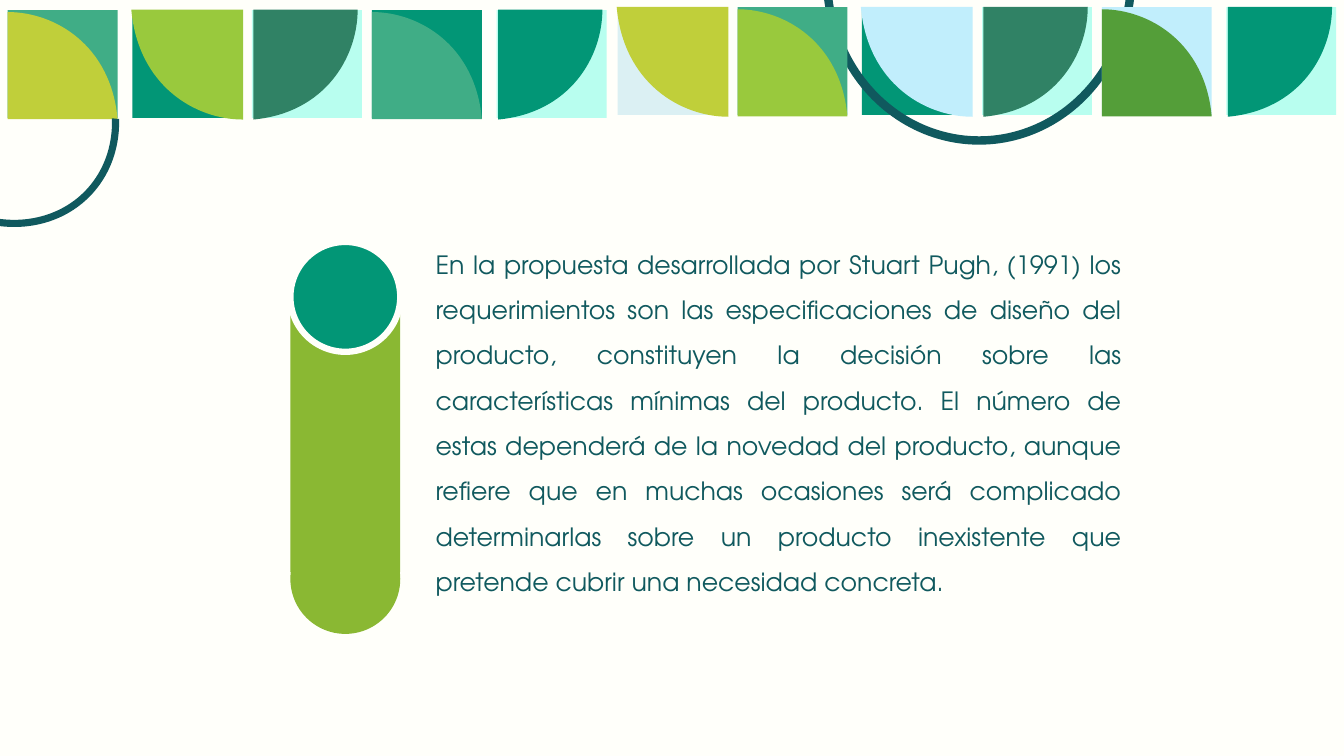
from lxml import etree
from pptx import Presentation
from pptx.dml.color import RGBColor
from pptx.enum.shapes import MSO_SHAPE
from pptx.enum.text import MSO_ANCHOR, PP_ALIGN
from pptx.oxml.ns import qn
from pptx.util import Pt

IVORY = RGBColor(0xFF, 0xFF, 0xFA)
PETROL = RGBColor(0x10, 0x59, 0x5E)
TEAL = RGBColor(0x02, 0x96, 0x76)
MINT = RGBColor(0xB8, 0xFE, 0xEF)
SKY = RGBColor(0xC1, 0xEE, 0xFC)
MIST = RGBColor(0xDB, 0xF0, 0xF3)
JADE = RGBColor(0x40, 0xAD, 0x86)
PINE = RGBColor(0x30, 0x82, 0x65)
LEAF = RGBColor(0x54, 0x9E, 0x39)
LIME = RGBColor(0x99, 0xC9, 0x3D)
OLIVE = RGBColor(0xC0, 0xCF, 0x3A)
GRASS = RGBColor(0x8A, 0xB8, 0x33)

TILE_W, TILE_H = 78.5, 77

# Left, top, square colour, petal colour, corner of the petal
TILES = [
    (5.5, 7.2, JADE, OLIVE, "SW"),
    (94.5, 7.2, TEAL, LIME, "NE"),
    (180, 7.2, MINT, PINE, "NW"),
    (265.7, 7.2, TEAL, JADE, "SW"),
    (354.8, 7.2, MINT, TEAL, "NW"),
    (441.2, 5.2, MIST, OLIVE, "NE"),
    (526.8, 5.2, JADE, LIME, "SW"),
    (615.6, 5.2, TEAL, SKY, "NE"),
    (701.5, 5.2, MINT, PINE, "NW"),
    (787, 5.2, SKY, LEAF, "SW"),
    (876, 5.2, MINT, TEAL, "NW"),
]
BEHIND_RING = (7, 8)

# Petal in a unit square: corner, curve start, two control points, curve end
PETAL = [(0, 1), (0, 0), (0.43, 0), (0.94, 0.31), (1, 1)]
TURNS = {
    "SW": lambda x, y: (x, y),
    "NW": lambda x, y: (1 - y, x),
    "NE": lambda x, y: (1 - x, 1 - y),
}
# Petal box relative to its tile: dx, dy, width, height
PETAL_BOX = {
    "SW": (0, 1.4, 78.5, 76.5),
    "NW": (1, -0.3, 74.5, 78.5),
    "NE": (-0.7, -0.3, 79.8, 78.5),
}

PUGH_TEXT = (
    "En la propuesta desarrollada por Stuart Pugh, (1991) los requerimientos son "
    "las especificaciones de diseño del producto, constituyen la decisión sobre "
    "las características mínimas del producto. El número de estas dependerá de la "
    "novedad del producto, aunque refiere que en muchas ocasiones será complicado "
    "determinarlas sobre un producto inexistente que pretende cubrir una necesidad "
    "concreta."
)


def paint(sp, fill=None, line=None, width=0):
    sp.shadow.inherit = False
    if fill is None:
        sp.fill.background()
    else:
        sp.fill.solid()
        sp.fill.fore_color.rgb = fill
    if line is None:
        sp.line.fill.background()
    else:
        sp.line.color.rgb = line
        sp.line.width = Pt(width)


def add_shape(shapes, kind, x, y, w, h, **look):
    sp = shapes.add_shape(kind, Pt(x), Pt(y), Pt(w), Pt(h))
    paint(sp, **look)
    return sp


def add_petal(shapes, x, y, w, h, corner, color):
    """Draw a quarter petal: two straight sides and one cubic curve."""
    units = [TURNS[corner](*point) for point in PETAL]
    pts = [(Pt(u * w), Pt(v * h)) for u, v in units]
    builder = shapes.build_freeform(*pts[0])
    builder.add_line_segments([pts[1], pts[4]], close=True)
    sp = builder.convert_to_shape(Pt(x), Pt(y))
    paint(sp, fill=color)
    straight = sp.element.findall(".//" + qn("a:lnTo"))[1]
    curve = etree.Element(qn("a:cubicBezTo"))
    for px, py in pts[2:]:
        etree.SubElement(curve, qn("a:pt"), x=str(px), y=str(py))
    straight.getparent().replace(straight, curve)


def add_square(shapes, tile):
    x, y, color, _, _ = tile
    add_shape(shapes, MSO_SHAPE.RECTANGLE, x, y, TILE_W, TILE_H, fill=color)


def add_tile_band(shapes):
    """Row of petal tiles, with a ring woven between two of them."""
    for i in BEHIND_RING:
        add_square(shapes, TILES[i])
    ring = add_shape(shapes, MSO_SHAPE.FLOWCHART_DELAY, 582.7, -125, 233.3, 217.4,
                     line=PETROL, width=6)
    ring.rotation = 90
    for i, tile in enumerate(TILES):
        if i not in BEHIND_RING:
            add_square(shapes, tile)
        x, y, _, color, corner = tile
        dx, dy, w, h = PETAL_BOX[corner]
        add_petal(shapes, x + dx, y + dy, w, h, corner, color)


def add_corner_arc(shapes, x, y, w, h):
    arc = add_shape(shapes, MSO_SHAPE.BLOCK_ARC, x, y, w, h, fill=PETROL)
    arc.rotation = 44.2
    arc.element.spPr.find(qn("a:xfrm")).set("flipV", "1")
    for i, value in enumerate((188.693, 23.311, 0.032)):
        arc.adjustments[i] = value


def add_pill(shapes, x, y, w, h):
    """Vertical bar with a rounded foot and a round head."""
    group = shapes.add_group_shape().shapes
    add_shape(group, MSO_SHAPE.OVAL, x, y + h - w, w, w, fill=GRASS)
    add_shape(group, MSO_SHAPE.RECTANGLE, x, y + 35.6, w, 200.2, fill=GRASS)
    add_shape(group, MSO_SHAPE.OVAL, x, y, w, w, fill=TEAL, line=IVORY, width=4.5)


def add_text(shapes, text, x, y, w, h, size, color, font, top=3.6,
             align=PP_ALIGN.JUSTIFY, spacing=1.5, after=8):
    tf = shapes.add_textbox(Pt(x), Pt(y), Pt(w), Pt(h)).text_frame
    tf.word_wrap = True
    tf.vertical_anchor = MSO_ANCHOR.TOP
    tf.margin_top = Pt(top)
    p = tf.paragraphs[0]
    p.alignment = align
    p.line_spacing = spacing
    p.space_after = Pt(after)
    r = p.add_run()
    r.text = text
    r.font.size = Pt(size)
    r.font.name = font
    r.font.color.rgb = color


def main():
    prs = Presentation()
    prs.slide_width, prs.slide_height = Pt(960), Pt(540)
    s = prs.slides.add_slide(prs.slide_layouts[6])
    s.background.fill.solid()
    s.background.fill.fore_color.rgb = IVORY
    add_tile_band(s.shapes)
    add_corner_arc(s.shapes, -90.7, -2.9, 180.7, 159.8)
    add_pill(s.shapes, 207.4, 172.8, 78.5, 280)
    add_text(s.shapes, PUGH_TEXT, 304.1, 139, 504, 302.4, size=18, color=PETROL,
             font="TeX Gyre Adventor", top=28)
    prs.save("out.pptx")


if __name__ == "__main__":
    main()
